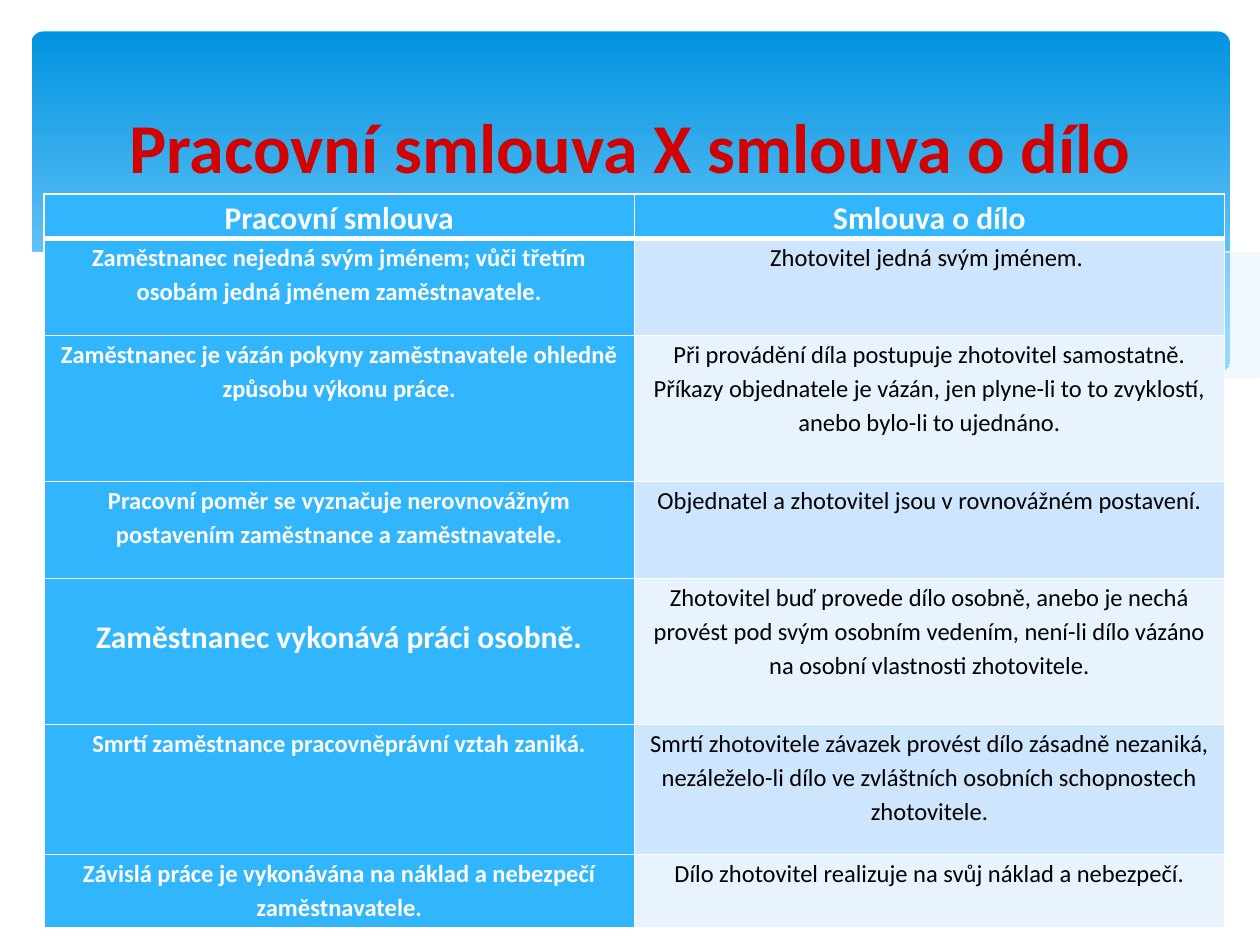
from dataclasses import dataclass
from lxml.etree import SubElement
from pptx import Presentation
from pptx.dml.color import RGBColor
from pptx.enum.shapes import MSO_SHAPE
from pptx.enum.text import MSO_ANCHOR, PP_ALIGN
from pptx.oxml.ns import qn
from pptx.slide import Slide
from pptx.util import Inches, Pt

WHITE = RGBColor(0xFF, 0xFF, 0xFF)
BLACK = RGBColor(0, 0, 0)
RED = RGBColor(0xD1, 0x02, 0x02)
BLUE = RGBColor(0x31, 0xB6, 0xFD)
DEEP_BLUE = RGBColor(0x02, 0x93, 0xE0)
SKY = RGBColor(0x83, 0xD3, 0xFE)
MIST = RGBColor(0xC6, 0xE7, 0xFC)
BANDS = [RGBColor(0xCE, 0xE5, 0xFE), RGBColor(0xE8, 0xF3, 0xFF)]

RIGHT_WAVE = [
    (9.75, 2), (9.48, 2.04), (9.21, 2.1), (8.91, 2.16), (8.61, 2.23), (8.05, 2.37),
    (7.53, 2.48), (7.06, 2.57), (6.61, 2.65), (6.91, 2.69), (7.19, 2.72), (7.45, 2.75),
    (7.69, 2.77), (8.03, 2.78), (8.35, 2.77), (8.63, 2.75), (8.89, 2.72), (9.13, 2.67),
    (9.35, 2.62), (9.49, 2.57), (9.63, 2.52), (9.76, 2.47), (9.76, 2)]
MIDDLE_WAVE = [
    (8.93, 2.73), (8.66, 2.69), (8.07, 2.6), (7.41, 2.47), (6.68, 2.31), (6.29, 2.22),
    (5.98, 2.14), (5.69, 2.08), (5.41, 2.03), (5.14, 1.98), (4.89, 1.94), (4.42, 1.89),
    (3.99, 1.86), (3.61, 1.85), (3.28, 1.87), (2.86, 1.91), (3.23, 1.96), (3.62, 2.03),
    (4.04, 2.11), (4.49, 2.22), (5.3, 2.4), (5.84, 2.52), (6.34, 2.61), (6.8, 2.68),
    (7.22, 2.74), (7.61, 2.77), (7.96, 2.78), (8.28, 2.78), (8.57, 2.77), (8.76, 2.75)]
LONG_CURVE = [
    (3.09, 1.95), (3.28, 1.92), (3.53, 1.89), (3.87, 1.87), (4.16, 1.87), (4.5, 1.88),
    (4.89, 1.9), (5.33, 1.94), (5.82, 2), (6.36, 2.08), (6.95, 2.19), (7.6, 2.33),
    (8.31, 2.51), (9.07, 2.72)]
SHORT_CURVE = [
    (6.13, 2.57), (6.53, 2.46), (6.95, 2.35), (7.48, 2.23), (8.06, 2.1), (8.66, 1.99),
    (8.95, 1.94), (9.24, 1.9), (9.51, 1.87), (9.75, 1.85)]
WHITE_WAVE = [
    (9.77, 2.46), (9.59, 2.53), (9.4, 2.59), (9.2, 2.65), (8.99, 2.69), (8.75, 2.73),
    (8.5, 2.75), (8.09, 2.77), (7.61, 2.75), (7.08, 2.7), (6.48, 2.62), (5.79, 2.5),
    (5.03, 2.33), (4.47, 2.2), (3.91, 2.07), (3.4, 1.97), (2.92, 1.9), (2.5, 1.86),
    (2.11, 1.84), (1.77, 1.84), (1.46, 1.85), (1.19, 1.87), (0.95, 1.91), (0.76, 1.95),
    (0.59, 1.99), (0.46, 2.03), (0.36, 2.07), (0.23, 2.13), (0.23, 3.29), (9.77, 3.29)]

HEADINGS = ("Pracovní smlouva", "Smlouva o dílo")
COMPARISON = [
    ("Zaměstnanec nejedná svým jménem; vůči třetím osobám jedná jménem zaměstnavatele.",
     "Zhotovitel jedná svým jménem. "),
    ("Zaměstnanec je vázán pokyny zaměstnavatele ohledně způsobu výkonu práce.",
     "Při provádění díla postupuje zhotovitel samostatně. Příkazy objednatele je vázán, "
     "jen plyne-li to to zvyklostí, anebo bylo-li to ujednáno."),
    ("Pracovní poměr se vyznačuje nerovnovážným postavením zaměstnance a zaměstnavatele.",
     "Objednatel a zhotovitel jsou v rovnovážném postavení."),
    ("Zaměstnanec vykonává práci osobně.",
     "Zhotovitel buď provede dílo osobně, anebo je nechá provést pod svým osobním vedením, "
     "není-li dílo vázáno na osobní vlastnosti zhotovitele."),
    ("Smrtí zaměstnance pracovněprávní vztah zaniká.",
     "Smrtí zhotovitele závazek provést dílo zásadně nezaniká, nezáleželo-li dílo "
     "ve zvláštních osobních schopnostech zhotovitele."),
    ("Závislá práce je vykonávána na náklad a nebezpečí zaměstnavatele.",
     "Dílo zhotovitel realizuje na svůj náklad a nebezpečí."),
]
ROW_HEIGHTS = [0.29, 0.77, 1.16, 0.77, 1.16, 1.03, 0.58]
EMPHASIZED_ROW = 4


@dataclass
class SlideBuilder:
    page: Slide
    font: str = "Calibri"

    def style_text(self, para, text, size, color, bold):
        para.text = text
        para.alignment = PP_ALIGN.CENTER
        font = para.font
        font.name, font.size, font.bold = self.font, Pt(size), bold
        font.color.rgb = color

    def banner(self, left, top, width, height):
        box = self.page.shapes.add_shape(
            MSO_SHAPE.ROUNDED_RECTANGLE,
            Inches(left), Inches(top), Inches(width), Inches(height))
        box.adjustments[0] = 0.034
        box.shadow.inherit = False
        box.line.fill.background()
        box.fill.gradient()
        box.fill.gradient_angle = 270
        for stop, color, position in zip(box.fill.gradient_stops, (DEEP_BLUE, SKY), (0, 0.9)):
            stop.color.rgb = color
            stop.position = position

    def outline(self, points, closed):
        builder = self.page.shapes.build_freeform(*points[0], scale=Inches(1))
        builder.add_line_segments(points[1:], close=closed)
        shape = builder.convert_to_shape()
        shape.shadow.inherit = False
        return shape

    def wave(self, points, color, opacity=100):
        shape = self.outline(points, True)
        shape.line.fill.background()
        shape.fill.solid()
        shape.fill.fore_color.rgb = color
        if opacity < 100:
            tint = shape._element.spPr.find(qn("a:solidFill")).find(qn("a:srgbClr"))
            SubElement(tint, qn("a:alpha"), val=str(opacity * 1000))

    def curve(self, points):
        shape = self.outline(points, False)
        shape.fill.background()
        shape.line.color.rgb = WHITE
        shape.line.width = Pt(0)

    def title(self, text, left, top, width, height):
        box = self.page.shapes.title
        self.page.shapes._spTree.append(box._element)  # in front of the backdrop
        box.left, box.top, box.width, box.height = map(Inches, (left, top, width, height))
        box.text_frame.vertical_anchor = MSO_ANCHOR.MIDDLE
        self.style_text(box.text_frame.paragraphs[0], text, 40, RED, True)

    def borders(self, cell, top, bottom):
        """Draw white cell edges; top and bottom are widths in points."""
        properties = cell._tc.get_or_add_tcPr()
        for side, width in (("L", 1), ("R", 1), ("T", top), ("B", bottom)):
            edge = SubElement(properties, qn("a:ln" + side), w=str(Pt(width)))
            fill = SubElement(edge, qn("a:solidFill"))
            SubElement(fill, qn("a:srgbClr"), val=str(WHITE))

    def cell(self, cell, text, size, color, bold, fill):
        cell.margin_left = cell.margin_right = Inches(0.06)
        cell.margin_top = cell.margin_bottom = 0
        cell.fill.solid()
        cell.fill.fore_color.rgb = fill
        para = cell.text_frame.paragraphs[0]
        para.line_spacing = 1.15
        self.style_text(para, text, size, color, bold)

    def table(self, rows, heights, left, top, width):
        table = self.page.shapes.add_table(
            len(rows), 2, Inches(left), Inches(top), Inches(width), Inches(sum(heights))).table
        for column in table.columns:
            column.width = Inches(width / 2)
        for index, (texts, height) in enumerate(zip(rows, heights)):
            table.rows[index].height = Inches(height)
            for side, text in enumerate(texts):
                cell = table.cell(index, side)
                self.borders(cell, 3 if index == 1 else 1, 3 if index == 0 else 1)
                strong = index == 0 or side == 0
                large = index == 0 or (index == EMPHASIZED_ROW and side == 0)
                self.cell(cell, text, 18 if large else 14, WHITE if strong else BLACK,
                          strong, BLUE if strong else BANDS[(index - 1) % 2])
        table.cell(EMPHASIZED_ROW, 0).margin_top = Inches(0.27)


def main():
    deck = Presentation()
    deck.slide_width, deck.slide_height = Inches(10), Inches(7.5)
    slide = SlideBuilder(deck.slides.add_slide(deck.slide_layouts[5]))
    slide.banner(0.25, 0.25, 9.51, 2.7)
    slide.wave(RIGHT_WAVE, MIST, 29)
    slide.wave(MIDDLE_WAVE, MIST, 40)
    slide.curve(LONG_CURVE)
    slide.curve(SHORT_CURVE)
    slide.wave(WHITE_WAVE, WHITE)
    slide.title("Pracovní smlouva X smlouva o dílo", 0.5, 0.76, 9, 0.79)
    slide.table([HEADINGS] + COMPARISON, ROW_HEIGHTS, 0.35, 1.54, 9.37)
    deck.save("out.pptx")


if __name__ == "__main__":
    main()
